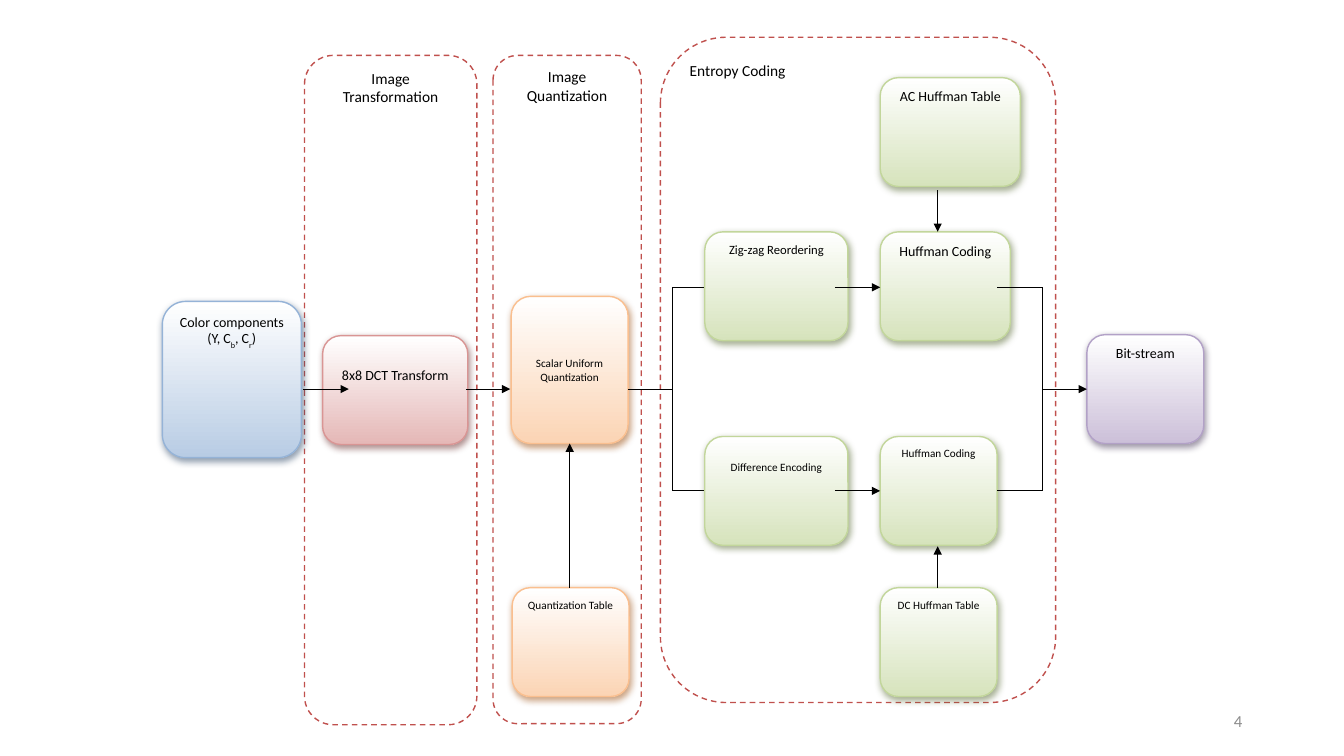
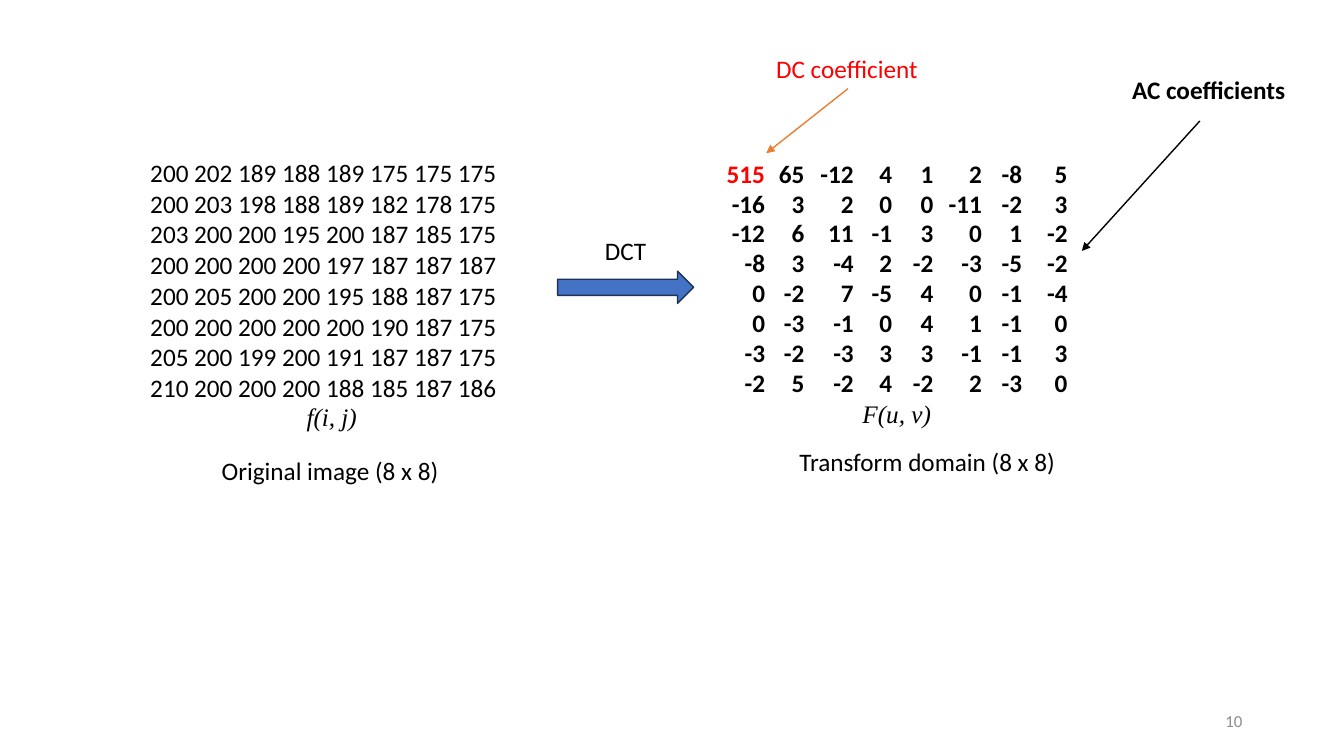
from lxml import etree
from pptx import Presentation
from pptx.dml.color import RGBColor
from pptx.enum.dml import MSO_LINE
from pptx.enum.shapes import MSO_CONNECTOR, MSO_SHAPE
from pptx.enum.text import MSO_ANCHOR, PP_ALIGN
from pptx.oxml.ns import qn
from pptx.util import Inches, Pt

ROUNDED = MSO_SHAPE.FLOWCHART_ALTERNATE_PROCESS
RIGHT_ARROW = MSO_SHAPE.RIGHT_ARROW
STRAIGHT = MSO_CONNECTOR.STRAIGHT
DASH = MSO_LINE.DASH
LEFT, CENTER, RIGHT = PP_ALIGN.LEFT, PP_ALIGN.CENTER, PP_ALIGN.RIGHT
TOP, MIDDLE = MSO_ANCHOR.TOP, MSO_ANCHOR.MIDDLE

BODY_FONT, MATH_FONT = "Calibri", "Times New Roman"
BLACK, WHITE, GRAY, RED = "000000", "FFFFFF", "8C8C8C", "FF0000"
FRAME_LINE, ORANGE, BLUE, NAVY = "C0504D", "ED7D31", "4472C4", "1E3256"

# Box palettes: gradient end, outline, shadow
BLUE_BOX = ("B8CCE4", "95B3D7", "243F60")
RED_BOX = ("E5B8B7", "D99594", "622423")
ORANGE_BOX = ("FBD4B4", "FABF8F", "974706")
GREEN_BOX = ("D6E3BC", "C2D69B", "4E6128")
PURPLE_BOX = ("CCC0D9", "B2A1C7", "3F3151")

BOX_H = 1.08
INSET = 0.05
MID_Y, AC_Y, DC_Y = 3.86, 2.85, 4.87
SPLIT_X, MERGE_X, TABLE_X = 6.67, 10.34, 9.3

PIXELS = [
    "200 202 189 188 189 175 175 175",
    "200 203 198 188 189 182 178 175",
    "203 200 200 195 200 187 185 175",
    "200 200 200 200 197 187 187 187",
    "200 205 200 200 195 188 187 175",
    "200 200 200 200 200 190 187 175",
    "205 200 199 200 191 187 187 175",
    "210 200 200 200 188 185 187 186",
]
COEFFICIENTS = [
    (515, 65, -12, 4, 1, 2, -8, 5),
    (-16, 3, 2, 0, 0, -11, -2, 3),
    (-12, 6, 11, -1, 3, 0, 1, -2),
    (-8, 3, -4, 2, -2, -3, -5, -2),
    (0, -2, 7, -5, 4, 0, -1, -4),
    (0, -3, -1, 0, 4, 1, -1, 0),
    (-3, -2, -3, 3, 3, -1, -1, 3),
    (-2, 5, -2, 4, -2, 2, -3, 0),
]
COEFFICIENT_TABS = (0.43, 0.82, 1.31, 1.69, 2.1, 2.58, 2.98, 3.43)


def rgb(color):
    return RGBColor.from_string(color)


def add_run(p, text, size, color=BLACK, bold=False, italic=False, font=BODY_FONT):
    r = p.add_run()
    r.text = text
    r.font.name, r.font.size = font, Pt(size)
    r.font.bold, r.font.italic = bold, italic
    r.font.color.rgb = rgb(color)
    return r


def next_paragraph(tf, first):
    return tf.paragraphs[0] if first else tf.add_paragraph()


def add_formula(tf, text):
    p = tf.add_paragraph()
    p.alignment = CENTER
    add_run(p, text, 18, italic=True, font=MATH_FONT)


def add_text(s, at, text, size=18, color=BLACK, bold=False, align=LEFT,
             anchor=TOP, wrap=False):
    tf = s.shapes.add_textbox(*map(Inches, at)).text_frame
    tf.word_wrap, tf.vertical_anchor = wrap, anchor
    p = tf.paragraphs[0]
    p.alignment = align
    add_run(p, text, size, color, bold)


def add_page_number(s, number):
    add_text(s, (9.42, 6.95, 3, 0.4), number, 12, GRAY,
             align=RIGHT, anchor=MIDDLE, wrap=True)


def add_outlined(s, kind, at, line):
    sp = s.shapes.add_shape(kind, *map(Inches, at))
    sp.shadow.inherit = False
    sp.line.color.rgb, sp.line.width = rgb(line), Pt(1)
    return sp


def add_frame(s, at, title, align=CENTER):
    """Dashed outline around one stage of the encoder."""
    sp = add_outlined(s, ROUNDED, at, FRAME_LINE)
    sp.fill.solid()
    sp.fill.fore_color.rgb = rgb(WHITE)
    sp.line.dash_style = DASH
    sp.text_frame.vertical_anchor = TOP
    p = sp.text_frame.paragraphs[0]
    p.alignment = align
    add_run(p, title, 11)


def add_soft_shadow(sp, color):
    effects = sp._element.spPr.find(qn("a:effectLst"))
    shadow = etree.SubElement(effects, qn("a:outerShdw"), blurRad=str(Pt(5)),
                              dist=str(Pt(2.3)), dir=str(65 * 60000),
                              algn="ctr", rotWithShape="0")
    clr = etree.SubElement(shadow, qn("a:srgbClr"), val=color)
    etree.SubElement(clr, qn("a:alpha"), val="50000")


def add_box(s, at, parts, size, palette, anchor=TOP, top=INSET, bottom=INSET):
    """Gradient box; every second item of parts is a subscript."""
    fill, line, shadow = palette
    sp = add_outlined(s, ROUNDED, at, line)
    sp.fill.gradient()
    sp.fill.gradient_angle = 270
    for stop, position, color in zip(sp.fill.gradient_stops, (0, 1), (WHITE, fill)):
        stop.position, stop.color.rgb = position, rgb(color)
    add_soft_shadow(sp, shadow)
    tf = sp.text_frame
    tf.vertical_anchor = anchor
    tf.margin_top, tf.margin_bottom = Inches(top), Inches(bottom)
    p = tf.paragraphs[0]
    p.alignment = CENTER
    for i, part in enumerate(parts):
        r = add_run(p, part, size)
        if i % 2:
            r._r.get_or_add_rPr().set("baseline", "-30000")


def add_line(s, start, end, arrow=True, color=BLACK, width=0.75):
    cx = s.shapes.add_connector(STRAIGHT, *map(Inches, (*start, *end)))
    cx.line.color.rgb, cx.line.width = rgb(color), Pt(width)
    if arrow:
        etree.SubElement(cx.line._get_or_add_ln(), qn("a:tailEnd"), type="triangle")
    etree.SubElement(cx._element.spPr, qn("a:effectLst"))


def add_right_tabs(p, positions):
    tabs = etree.SubElement(p._p.get_or_add_pPr(), qn("a:tabLst"))
    for x in positions:
        etree.SubElement(tabs, qn("a:tab"), pos=str(Inches(x)), algn="r")


def add_pixel_table(s, at):
    table = s.shapes.add_table(1, 1, *map(Inches, at)).table
    table.first_row = table.horz_banding = False
    cell = table.cell(0, 0)
    cell.fill.background()
    for i, row in enumerate(PIXELS):
        add_run(next_paragraph(cell.text_frame, i == 0), row, 18)
    add_formula(cell.text_frame, "f(i, j)")


def add_coefficients(s, at):
    tf = s.shapes.add_textbox(*map(Inches, at)).text_frame
    tf.word_wrap = True
    for i, row in enumerate(COEFFICIENTS):
        p = next_paragraph(tf, i == 0)
        p.line_spacing = 0.99
        add_right_tabs(p, COEFFICIENT_TABS)
        first, *rest = (f"\t{value}" for value in row)
        add_run(p, first, 18, BLACK if i else RED, bold=True)
        add_run(p, "".join(rest), 18, bold=True)
    add_formula(tf, "F(u, v)")


def build_encoder(s):
    add_page_number(s, "4")
    add_frame(s, (3.02, 0.55, 1.71, 6.64), "Image Transformation")
    add_frame(s, (4.89, 0.55, 1.47, 6.63), "Image Quantization")
    add_frame(s, (6.55, 0.37, 3.92, 6.6), "Entropy Coding", LEFT)

    # The branch arrows end behind the first entropy boxes
    for y in (AC_Y, DC_Y):
        add_line(s, (SPLIT_X, y), (7.12, y))

    add_box(s, (1.61, 2.99, 1.38, 1.55),
            ("Color components (Y, C", "b", ", C", "r", ")"), 10, BLUE_BOX)
    add_box(s, (3.2, 3.33, 1.44, BOX_H), ["8x8 DCT Transform"], 10, RED_BOX,
            MIDDLE, bottom=0.35)
    add_box(s, (5.07, 2.94, 1.16, 1.46), ["Scalar Uniform Quantization"], 8,
            ORANGE_BOX, MIDDLE)
    add_box(s, (5.08, 5.83, 1.16, BOX_H), ["Quantization Table"], 8, ORANGE_BOX)
    add_box(s, (6.99, 4.33, 1.42, BOX_H), ["Difference Encoding"], 8, GREEN_BOX,
            top=0.18)
    for x, y, w, text, size in (
        (6.99, 2.3, 1.42, "Zig-zag Reordering", 9),
        (8.73, 0.77, 1.39, "AC Huffman Table", 10),
        (8.73, 2.3, 1.29, "Huffman Coding", 10),
        (8.73, 4.33, 1.16, "Huffman Coding", 8),
        (8.73, 5.83, 1.16, "DC Huffman Table", 8),
    ):
        add_box(s, (x, y, w, BOX_H), [text], size, GREEN_BOX)
    add_box(s, (10.78, 3.32, 1.16, BOX_H), ["Bit-stream"], 10, PURPLE_BOX)

    for x1, x2 in ((3.01, 3.46), (4.62, 5.06), (MERGE_X, 10.78)):
        add_line(s, (x1, MID_Y), (x2, MID_Y))
    add_line(s, (6.23, MID_Y), (SPLIT_X, MID_Y), arrow=False)
    for x in (SPLIT_X, MERGE_X):
        add_line(s, (x, DC_Y), (x, AC_Y), arrow=False)
    for y in (AC_Y, DC_Y):
        add_line(s, (8.28, y), (8.73, y))
        add_line(s, (9.89, y), (MERGE_X, y), arrow=False)
    for x, y1, y2 in ((TABLE_X, 1.89, 2.3), (TABLE_X, 5.83, 5.42), (5.65, 5.83, 4.4)):
        add_line(s, (x, y1), (x, y2))


def build_dct_example(s):
    add_page_number(s, "10")
    add_pixel_table(s, (1.39, 1.52, 3.8, 2.8))
    add_coefficients(s, (7.06, 1.53, 3.67, 2.83))
    arrow = add_outlined(s, RIGHT_ARROW, (5.53, 2.69, 1.35, 0.32), NAVY)
    arrow.fill.solid()
    arrow.fill.fore_color.rgb = rgb(BLUE)
    add_text(s, (5.9, 2.29, 0.62, 0.4), "DCT")
    add_text(s, (2.1, 4.47, 2.38, 0.4), "Original image (8 x 8)")
    add_text(s, (7.83, 4.38, 2.77, 0.4), "Transform domain (8 x 8)")
    add_text(s, (7.6, 0.48, 1.63, 0.4), "DC coefficient", color=RED)
    add_line(s, (8.41, 0.88), (7.6, 1.52), color=ORANGE, width=1)
    add_text(s, (11.13, 0.69, 1.74, 0.4), "AC coefficients", bold=True)
    add_line(s, (11.9, 1.2), (10.73, 2.49), width=1)


def main():
    prs = Presentation()
    prs.slide_width, prs.slide_height = Inches(13.33), Inches(7.5)
    for build in (build_encoder, build_dct_example):
        build(prs.slides.add_slide(prs.slide_layouts[6]))
    prs.save("out.pptx")


if __name__ == "__main__":
    main()
